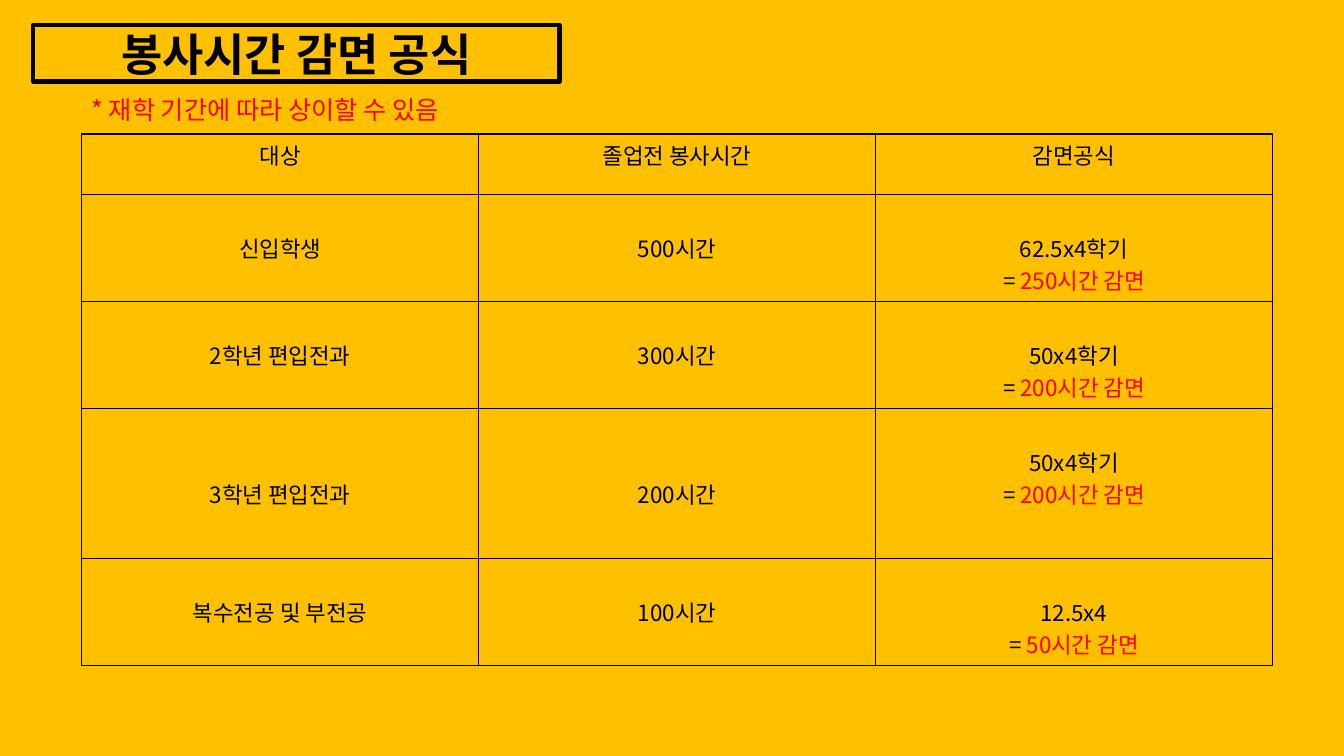
from dataclasses import dataclass

from lxml import etree
from pptx import Presentation
from pptx.dml.color import RGBColor
from pptx.enum.text import MSO_ANCHOR, MSO_AUTO_SIZE, PP_ALIGN
from pptx.oxml.ns import qn
from pptx.util import Inches, Pt

CENTER, LEFT = PP_ALIGN.CENTER, PP_ALIGN.LEFT
MIDDLE = MSO_ANCHOR.MIDDLE
NO_AUTOFIT = MSO_AUTO_SIZE.NONE

FONT = "Noto Sans CJK KR"
BLACK, RED, AMBER = "000000", "FF0000", "FFC000"
SLIDE_WIDTH, SLIDE_HEIGHT = 13.33, 7.5
TABLE_LEFT, TABLE_TOP, TABLE_WIDTH = 0.81, 1.33, 11.81
CELL_MARGIN, LINE_HEIGHT = 0.05, 0.32
HEADINGS = ("대상", "졸업전 봉사시간", "감면공식")


@dataclass
class Reduction:
    """One table row; drops are the lines each cell's text is lowered by."""
    student: str
    hours: str
    formula: str
    result: str
    height: float = 1.04
    drops: tuple[int, int, int] = (1, 1, 1)


REDUCTIONS = (
    Reduction("신입학생", "500시간", "62.5x4학기", "250시간 감면"),
    Reduction("2학년 편입전과", "300시간", "50x4학기", "200시간 감면"),
    Reduction("3학년 편입전과", "200시간", "50x4학기", "200시간 감면", 1.49, (2, 2, 1)),
    Reduction("복수전공 및 부전공", "100시간", "12.5x4", "50시간 감면"),
)


def color(value: str) -> RGBColor:
    return RGBColor.from_string(value)


def style(paragraph, size: float, text_color: str, alignment, bold: bool = False) -> None:
    paragraph.alignment = alignment
    font = paragraph.font
    font.size, font.bold, font.name = Pt(size), bold, FONT
    font.color.rgb = color(text_color)
    # Korean glyphs take the East Asian typeface
    defaults = paragraph._p.pPr.find(qn("a:defRPr"))
    etree.SubElement(defaults, qn("a:ea"), typeface=FONT)


def add_borders(cell) -> None:
    properties = cell._tc.get_or_add_tcPr()
    for position, side in enumerate(("a:lnL", "a:lnR", "a:lnT", "a:lnB")):
        line = etree.Element(qn(side), w=str(Pt(1)))
        fill = etree.SubElement(line, qn("a:solidFill"))
        etree.SubElement(fill, qn("a:srgbClr"), val=BLACK)
        properties.insert(position, line)


def fill_cell(cell, text: str, drop: int = 0, result: str = "") -> None:
    cell.fill.background()
    add_borders(cell)
    cell.margin_top = Inches(CELL_MARGIN + drop * LINE_HEIGHT)
    frame = cell.text_frame
    frame.text = text
    if result:
        paragraph = frame.add_paragraph()
        paragraph.add_run().text = "= "
        run = paragraph.add_run()
        run.text = result
        run.font.color.rgb = color(RED)
    for paragraph in frame.paragraphs:
        style(paragraph, 16, BLACK, CENTER)


def add_title(slide) -> None:
    title = slide.shapes.title
    title.left, title.top = Inches(0.33), Inches(0.25)
    title.width, title.height = Inches(5.22), Inches(0.56)
    title.line.color.rgb = color(BLACK)
    title.line.width = Pt(3)
    frame = title.text_frame
    frame.text = "봉사시간 감면 공식"
    frame.auto_size = NO_AUTOFIT
    frame.vertical_anchor = MIDDLE
    style(frame.paragraphs[0], 32, BLACK, CENTER, bold=True)


def add_note(slide) -> None:
    note = slide.shapes.add_textbox(
        Inches(TABLE_LEFT), Inches(0.89), Inches(9.76), Inches(0.4))
    frame = note.text_frame
    frame.word_wrap = True
    frame.text = "* 재학 기간에 따라 상이할 수 있음"
    style(frame.paragraphs[0], 18, RED, LEFT)


def add_reduction_table(slide) -> None:
    heights = [0.6] + [reduction.height for reduction in REDUCTIONS]
    table = slide.shapes.add_table(
        len(heights), len(HEADINGS), Inches(TABLE_LEFT), Inches(TABLE_TOP),
        Inches(TABLE_WIDTH), Inches(sum(heights))).table
    table.first_row = table.horz_banding = False
    for row, height in zip(table.rows, heights):
        row.height = Inches(height)
    for column, heading in enumerate(HEADINGS):
        table.columns[column].width = Inches(TABLE_WIDTH / len(HEADINGS))
        fill_cell(table.cell(0, column), heading)
    for row, reduction in enumerate(REDUCTIONS, start=1):
        texts = (reduction.student, reduction.hours, reduction.formula)
        results = ("", "", reduction.result)
        for column, content in enumerate(zip(texts, reduction.drops, results)):
            fill_cell(table.cell(row, column), *content)


def main() -> None:
    presentation = Presentation()
    presentation.slide_width = Inches(SLIDE_WIDTH)
    presentation.slide_height = Inches(SLIDE_HEIGHT)
    slide = presentation.slides.add_slide(presentation.slide_layouts.get_by_name("Title Only"))

    # Amber background
    background = slide.background.fill
    background.solid()
    background.fore_color.rgb = color(AMBER)

    # Framed title, table and note
    add_title(slide)
    add_reduction_table(slide)
    add_note(slide)
    presentation.save("out.pptx")


if __name__ == "__main__":
    main()
